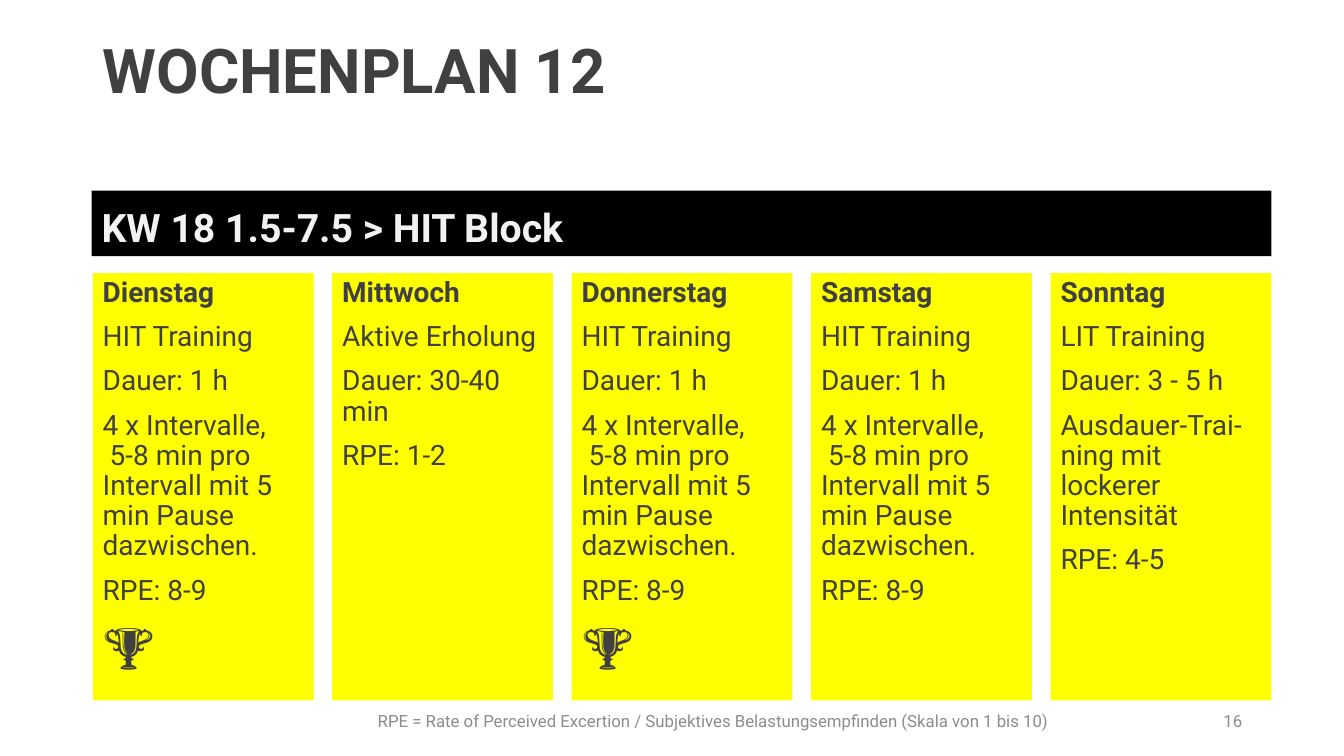
"""Build the weekly training plan slide."""
from dataclasses import dataclass

from pptx import Presentation
from pptx.dml.color import RGBColor
from pptx.enum.shapes import MSO_SHAPE
from pptx.enum.text import MSO_ANCHOR, PP_ALIGN
from pptx.util import Inches, Pt

RECT = MSO_SHAPE.RECTANGLE
TOP, MIDDLE, BOTTOM = MSO_ANCHOR.TOP, MSO_ANCHOR.MIDDLE, MSO_ANCHOR.BOTTOM
LEFT, CENTER, RIGHT = PP_ALIGN.LEFT, PP_ALIGN.CENTER, PP_ALIGN.RIGHT

BLACK = RGBColor(0x00, 0x00, 0x00)
YELLOW = RGBColor(0xFF, 0xFF, 0x00)
DARK = RGBColor(0x40, 0x40, 0x40)
LIGHT = RGBColor(0xF2, 0xF2, 0xF2)
GRAY = RGBColor(0x8C, 0x8C, 0x8C)

FONT = "Roboto"
TROPHY = "🏆"
FIRST, LAST = 0.92, 10.42


@dataclass
class Box:
    """Place and size in inches."""
    left: float
    top: float
    width: float
    height: float


@dataclass
class Day:
    """One training day."""
    name: str
    lines: list[str]


HIT = [
    "HIT Training",
    "Dauer: 1 h",
    "4 x Intervalle,\v 5-8 min pro Intervall mit 5 min Pause dazwischen.",
    "RPE: 8-9",
]
DAYS = [
    Day("Dienstag", HIT + [TROPHY]),
    Day("Mittwoch", ["Aktive Erholung", "Dauer: 30-40 min", "RPE: 1-2"]),
    Day("Donnerstag", HIT + [TROPHY]),
    Day("Samstag", HIT),
    Day("Sonntag", [
        "LIT Training",
        "Dauer: 3 - 5 h",
        "Ausdauer-Trai-ning mit lockerer Intensität",
        "RPE: 4-5",
    ]),
]


def write(frame, text: str, *, size: float, color: RGBColor, bold: bool = False,
          align: PP_ALIGN = LEFT, space: float = 0, line: float = 0.9,
          more: bool = False) -> None:
    """Write one paragraph, adding it after the others if more is set."""
    para = frame.add_paragraph() if more else frame.paragraphs[0]
    para.text = text
    para.alignment = align
    para.line_spacing = line
    para.space_before = Pt(space)
    for run in para.runs:
        run.font.name = FONT
        run.font.size = Pt(size)
        run.font.bold = bold
        run.font.color.rgb = color


def add_box(slide, box: Box, anchor: MSO_ANCHOR, fill: RGBColor | None = None):
    """Add a text box or a filled rectangle and return its text frame."""
    spot = [Inches(v) for v in (box.left, box.top, box.width, box.height)]
    if fill is None:
        shape = slide.shapes.add_textbox(*spot)
    else:
        shape = slide.shapes.add_shape(RECT, *spot)
        shape.shadow.inherit = False
        shape.fill.solid()
        shape.fill.fore_color.rgb = fill
        shape.line.fill.background()
    frame = shape.text_frame
    frame.word_wrap = True
    frame.vertical_anchor = anchor
    return frame


def add_day(slide, day: Day, left: float) -> None:
    """Draw the column of one day."""
    frame = add_box(slide, Box(left, 2.71, 2.19, 4.24), TOP, YELLOW)
    write(frame, day.name, size=20, color=DARK, bold=True)
    for text in day.lines:
        size = 40 if text == TROPHY else 20
        write(frame, text, size=size, color=DARK, space=10, more=True)


def main() -> None:
    """Build and save the slide."""
    deck = Presentation()
    deck.slide_width, deck.slide_height = Inches(13.33), Inches(7.5)
    slide = deck.slides.add_slide(deck.slide_layouts[6])

    title = add_box(slide, Box(0.92, 0.09, 10.02, 1.27), MIDDLE)
    write(title, "WOCHENPLAN 12", size=44, color=DARK, bold=True)
    week = add_box(slide, Box(0.91, 1.89, 11.7, 0.65), BOTTOM, BLACK)
    write(week, "KW 18 1.5-7.5 > HIT Block", size=28, color=LIGHT, bold=True)
    note = add_box(slide, Box(1.73, 6.95, 10.69, 0.41), MIDDLE)
    write(note, "RPE = Rate of Perceived Excertion / Subjektives "
          "Belastungsempfinden (Skala von 1 bis 10)",
          size=12, color=GRAY, align=CENTER, line=1.0)
    page = add_box(slide, Box(9.42, 6.95, 3, 0.4), MIDDLE)
    write(page, "16", size=12, color=GRAY, align=RIGHT, line=1.0)

    step = (LAST - FIRST) / (len(DAYS) - 1)
    for i, day in enumerate(DAYS):
        add_day(slide, day, FIRST + i * step)

    deck.save("out.pptx")


if __name__ == "__main__":
    main()
